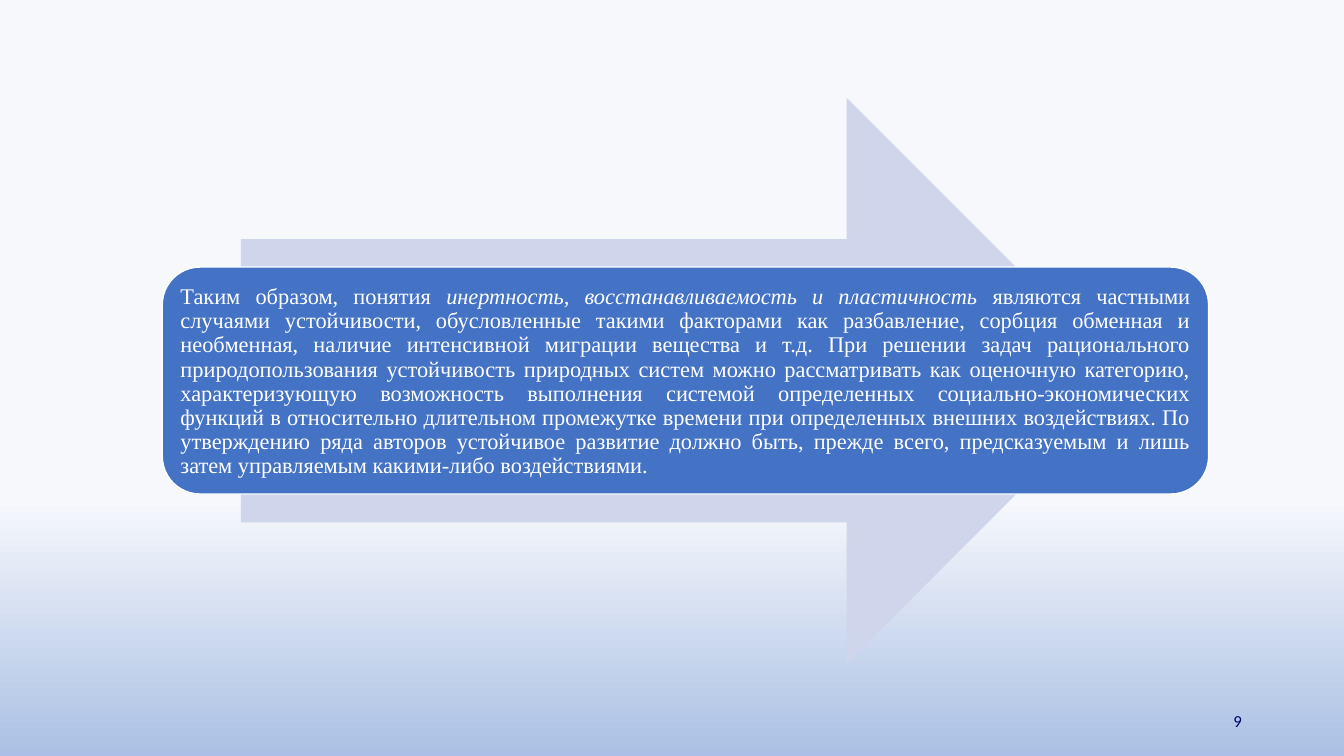
from dataclasses import dataclass

from pptx import Presentation
from pptx.dml.color import RGBColor
from pptx.enum.shapes import MSO_SHAPE as Preset
from pptx.enum.text import MSO_ANCHOR as Anchor, PP_ALIGN as Align
from pptx.shapes.autoshape import Shape
from pptx.slide import Slide
from pptx.util import Cm, Pt

COLORS = {
    "sky": "F6F8FC",
    "horizon": "ABC0E4",
    "arrow": "CFD5EA",
    "panel": "4472C4",
    "white": "FFFFFF",
    "number": "000066",
}

CONCLUSION = (
    ("Таким образом, понятия ", False),
    ("инертность, восстанавливаемость и пластичность", True),
    (" являются частными случаями устойчивости, обусловленные такими факторами "
     "как разбавление, сорбция обменная и необменная, наличие интенсивной миграции "
     "вещества и т.д. При решении задач рационального природопользования "
     "устойчивость природных систем можно рассматривать как оценочную категорию, "
     "характеризующую возможность выполнения системой определенных "
     "социально-экономических функций в относительно длительном промежутке времени "
     "при определенных внешних воздействиях. По утверждению ряда авторов устойчивое "
     "развитие должно быть, прежде всего, предсказуемым и лишь затем управляемым "
     "какими-либо воздействиями.", False),
)


@dataclass(frozen=True)
class Block:
    """A filled preset shape; lengths in centimetres."""
    preset: Preset
    left: float
    top: float
    width: float
    height: float
    fill: str
    outline: str | None = None


ARROW = Block(Preset.RIGHT_ARROW, 6.07, 2.46, 22.4, 14.27, "arrow")
PANEL = Block(Preset.ROUNDED_RECTANGLE, 4.09, 6.73, 26.37, 5.72, "panel", "white")


def rgb(name: str) -> RGBColor:
    return RGBColor.from_string(COLORS[name])


def paint_background(slide: Slide) -> None:
    fill = slide.background.fill
    fill.gradient()
    fill.gradient_angle = 270
    for stop, (position, color) in zip(fill.gradient_stops, ((0.66, "sky"), (1, "horizon"))):
        stop.position = position
        stop.color.rgb = rgb(color)


def draw_block(slide: Slide, block: Block) -> Shape:
    shape = slide.shapes.add_shape(
        block.preset, Cm(block.left), Cm(block.top), Cm(block.width), Cm(block.height))
    shape.shadow.inherit = False
    shape.fill.solid()
    shape.fill.fore_color.rgb = rgb(block.fill)
    if block.outline:
        shape.line.color.rgb = rgb(block.outline)
        shape.line.width = Pt(1)
    else:
        shape.line.fill.background()
    return shape


def write(shape: Shape, runs: tuple[tuple[str, bool], ...], *, font: str, size: float,
          color: str, align: Align, anchor: Anchor, spacing: float = 1.0,
          inset: float | None = None) -> None:
    """Fill a shape with one paragraph of (text, italic) runs."""
    frame = shape.text_frame
    frame.word_wrap = True
    frame.vertical_anchor = anchor
    if inset is not None:
        frame.margin_left = frame.margin_right = Cm(inset)
        frame.margin_top = frame.margin_bottom = Cm(inset)
    paragraph = frame.paragraphs[0]
    paragraph.alignment = align
    paragraph.line_spacing = spacing
    for text, italic in runs:
        run = paragraph.add_run()
        run.text = text
        run.font.name = font
        run.font.size = Pt(size)
        run.font.italic = italic
        run.font.color.rgb = rgb(color)


def main() -> None:
    deck = Presentation()
    deck.slide_width, deck.slide_height = Cm(33.87), Cm(19.05)
    slide = deck.slides.add_slide(deck.slide_layouts[6])
    paint_background(slide)

    # Slide number
    page_number = slide.shapes.add_textbox(Cm(23.93), Cm(17.65), Cm(7.62), Cm(1.02))
    write(page_number, (("9", False),), font="Calibri", size=12, color="number",
          align=Align.RIGHT, anchor=Anchor.MIDDLE)

    # Arrow with the conclusion across it
    draw_block(slide, ARROW)
    conclusion = draw_block(slide, PANEL)
    write(conclusion, CONCLUSION, font="Times New Roman", size=16, color="white",
          align=Align.JUSTIFY, anchor=Anchor.TOP, spacing=0.9, inset=0.18)

    deck.save("out.pptx")


if __name__ == "__main__":
    main()
